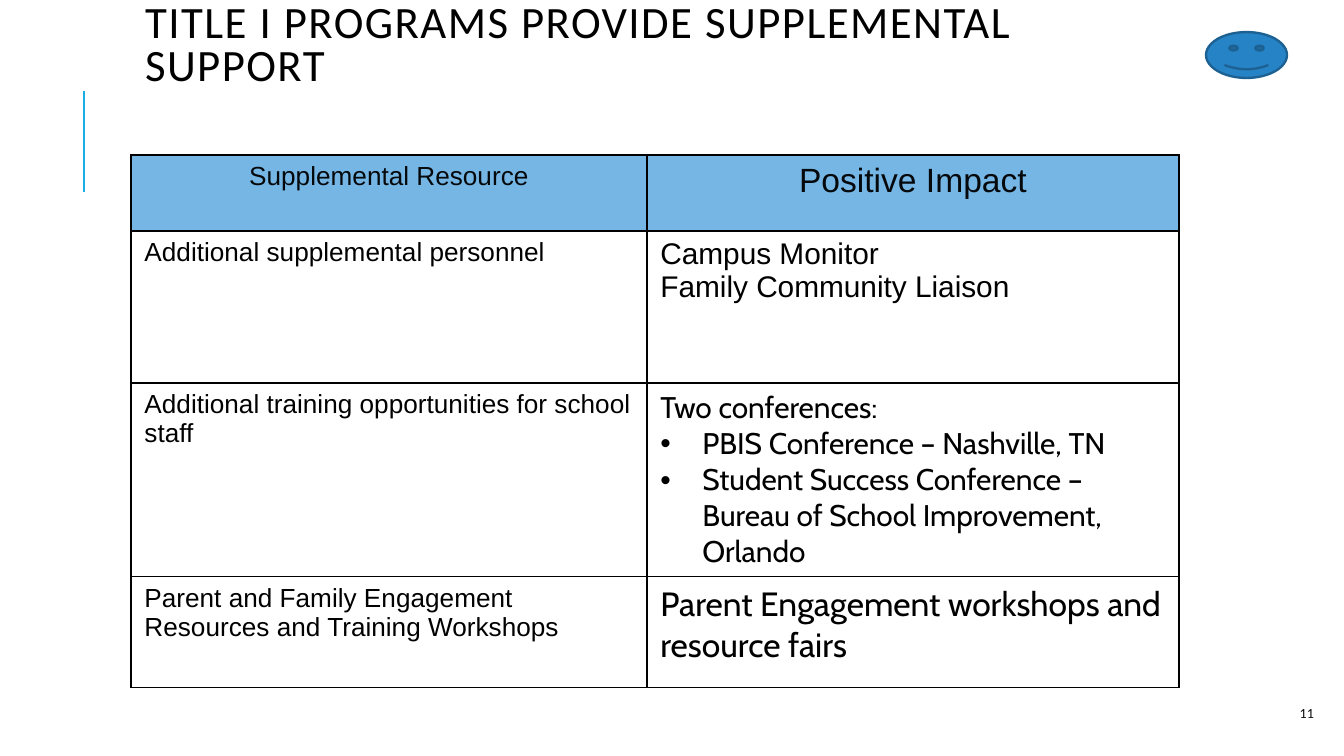
from lxml.etree import SubElement
from pptx import Presentation
from pptx.dml.color import RGBColor
from pptx.enum.shapes import MSO_CONNECTOR, MSO_SHAPE
from pptx.enum.text import MSO_ANCHOR, MSO_AUTO_SIZE, PP_ALIGN
from pptx.oxml import parse_xml
from pptx.oxml.ns import nsdecls, qn
from pptx.util import Pt

PX_PER_INCH = 134.4
BLACK = "000000"
HEADER_INK, HEADER_FILL = "05090C", "75B6E5"
BULLET = "• "

COL_WIDTHS = (516, 532)
ROW_HEIGHTS = (76, 152, 133, 111)
# Each cell: lines, size, font
ROWS = (
    ((["Supplemental Resource"], 14, "Arial"),
     (["Positive Impact"], 18, "Arial")),
    ((["Additional supplemental personnel"], 14, "Arial"),
     (["Campus Monitor", "Family Community Liaison"], 16, "Arial")),
    ((["Additional training opportunities for school staff"], 14, "Arial"),
     (["Two conferences:",
       BULLET + "PBIS Conference – Nashville, TN",
       BULLET + "Student Success Conference – Bureau of School Improvement, Orlando"],
      16, "Cabin")),
    ((["Parent and Family Engagement Resources and Training Workshops"], 14, "Arial"),
     (["Parent Engagement workshops and resource fairs"], 18, "Cabin")),
)


def px(n):
    return round(n * 914400 / PX_PER_INCH)


def rgb(value):
    return RGBColor.from_string(value)


class SlideBuilder:
    """Holds the style and the current slide."""
    font = "Calibri"
    inset = 13

    def __init__(self, prs):
        self.slide = prs.slides.add_slide(prs.slide_layouts[5])

    def place(self, sp, x, y, w, h):
        sp.left, sp.top, sp.width, sp.height = px(x), px(y), px(w), px(h)

    def frame(self, tf, anchor):
        tf.word_wrap = True
        tf.auto_size = MSO_AUTO_SIZE.NONE
        tf.vertical_anchor = anchor
        tf.margin_left = tf.margin_right = px(self.inset)
        tf.margin_top = tf.margin_bottom = px(self.inset)

    def format(self, p, size, color, font=None, align=PP_ALIGN.LEFT):
        p.alignment = align
        for r in p.runs:
            r.font.size, r.font.name = Pt(size), font or self.font
            r.font.color.rgb = rgb(color)

    def title(self, text, x, y, w, h):
        sp = self.slide.shapes.title
        self.place(sp, x, y, w, h)
        tf = sp.text_frame
        tf.text = text
        self.frame(tf, MSO_ANCHOR.BOTTOM)
        p = tf.paragraphs[0]
        p.line_spacing = 0.8
        self.format(p, 24, BLACK)
        p.runs[0].font._element.set("spc", "80")

    def page_number(self, text, x, y, w, h):
        tf = self.slide.shapes.add_textbox(px(x), px(y), px(w), px(h)).text_frame
        tf.text = text
        self.frame(tf, MSO_ANCHOR.TOP)
        self.format(tf.paragraphs[0], 7.5, "0D0D0D", align=PP_ALIGN.RIGHT)

    def line(self, x1, y1, x2, y2, color, width):
        ln = self.slide.shapes.add_connector(
            MSO_CONNECTOR.STRAIGHT, px(x1), px(y1), px(x2), px(y2))
        ln.line.color.rgb, ln.line.width = rgb(color), Pt(width)
        SubElement(ln._element.spPr, qn("a:effectLst"))

    def shape(self, kind, x, y, w, h, fill, outline, width):
        sp = self.slide.shapes.add_shape(kind, px(x), px(y), px(w), px(h))
        sp.shadow.inherit = False
        sp.fill.solid()
        sp.fill.fore_color.rgb = rgb(fill)
        sp.line.color.rgb, sp.line.width = rgb(outline), Pt(width)

    def bullet(self, p):
        pPr = p._p.get_or_add_pPr()
        pPr.set("marL", str(px(42)))
        pPr.set("indent", str(px(-42)))
        SubElement(pPr, qn("a:buFont")).set("typeface", "Arial")
        SubElement(pPr, qn("a:buChar")).set("char", BULLET.strip())

    def borders(self, cell, color, width):
        tcPr = cell._tc.get_or_add_tcPr()
        for i, side in enumerate(("lnL", "lnR", "lnT", "lnB")):
            tcPr.insert(i, parse_xml(
                f'<a:{side} {nsdecls("a")} w="{Pt(width)}"><a:solidFill>'
                f'<a:srgbClr val="{color}"/></a:solidFill></a:{side}>'))

    def cell(self, cell, lines, size, font, header):
        tf = cell.text_frame
        tf.text = "\n".join(line.removeprefix(BULLET) for line in lines)
        for p, line in zip(tf.paragraphs, lines):
            self.format(p, size, HEADER_INK if header else BLACK, font,
                        PP_ALIGN.CENTER if header else PP_ALIGN.LEFT)
            if line.startswith(BULLET):
                self.bullet(p)
        if header:
            cell.fill.solid()
            cell.fill.fore_color.rgb = rgb(HEADER_FILL)
        else:
            cell.fill.background()
        self.borders(cell, BLACK, 0.75)

    def table(self, rows, x, y, widths, heights):
        table = self.slide.shapes.add_table(
            len(rows), len(widths), px(x), px(y),
            px(sum(widths)), px(sum(heights))).table
        table.first_row = table.horz_banding = False
        for col, w in zip(table.columns, widths):
            col.width = px(w)
        for i, (row, h) in enumerate(zip(rows, heights)):
            table.rows[i].height = px(h)
            for j, (lines, size, font) in enumerate(row):
                self.cell(table.cell(i, j), lines, size, font, header=i == 0)


def main():
    prs = Presentation()
    prs.slide_width, prs.slide_height = px(1344), px(756)
    s = SlideBuilder(prs)
    s.line(84, 192, 84, 91, "1CADE4", 1.5)
    s.title("TITLE I PROGRAMS PROVIDE SUPPLEMENTAL SUPPORT", 132, 28, 1031, 75)
    s.page_number("11", 1246, 691, 81, 46)
    s.table(ROWS, 131, 155, COL_WIDTHS, ROW_HEIGHTS)
    s.shape(MSO_SHAPE.SMILEY_FACE, 1206, 32, 81, 46, "2683C6", "1C6192", 1.25)
    prs.save("out.pptx")


if __name__ == "__main__":
    main()
